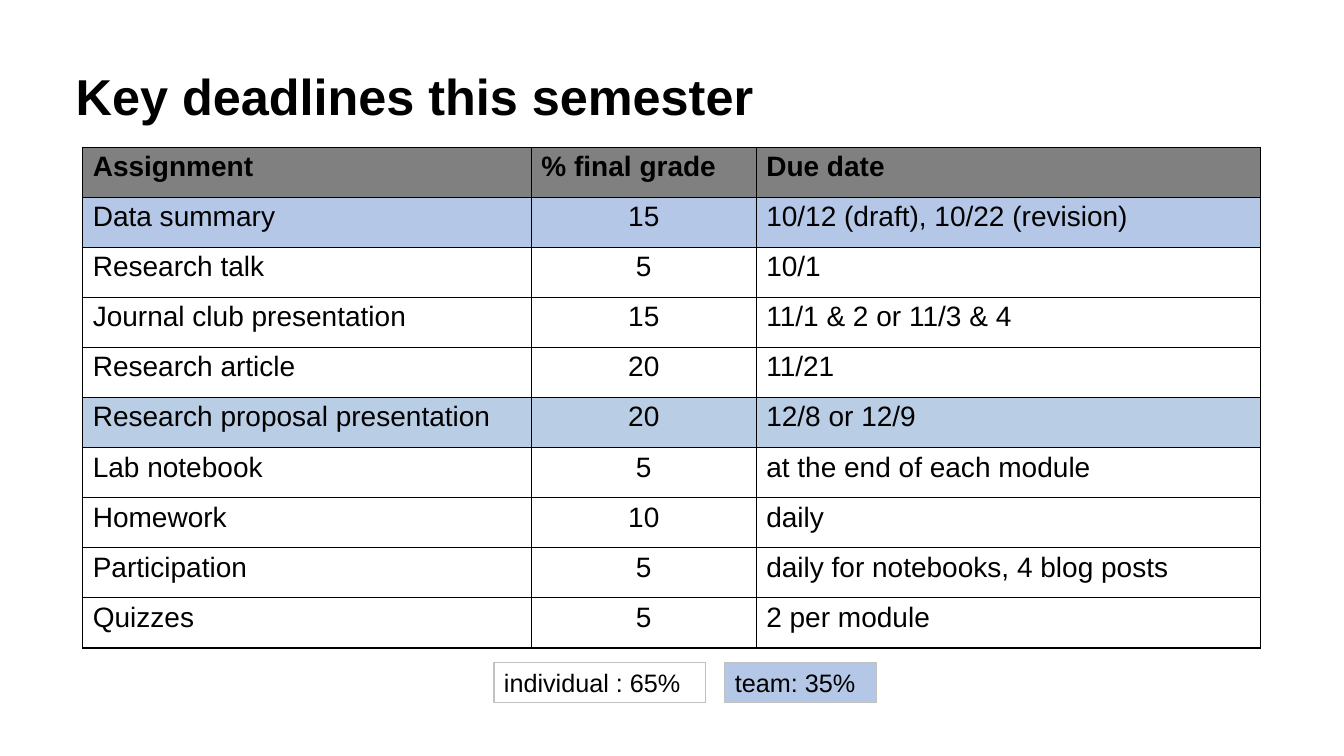
from lxml import etree
from pptx import Presentation
from pptx.dml.color import RGBColor
from pptx.enum.shapes import MSO_SHAPE
from pptx.enum.text import MSO_ANCHOR, PP_ALIGN
from pptx.oxml.ns import qn
from pptx.util import Inches, Pt

RECT = MSO_SHAPE.RECTANGLE
LEFT, CENTER = PP_ALIGN.LEFT, PP_ALIGN.CENTER
TOP, MIDDLE = MSO_ANCHOR.TOP, MSO_ANCHOR.MIDDLE

BLACK = RGBColor(0x00, 0x00, 0x00)
HEADER_GREY = RGBColor(0x80, 0x80, 0x80)
TEAM_BLUE = RGBColor(0xB4, 0xC7, 0xE7)
PROPOSAL_BLUE = RGBColor(0xB9, 0xCD, 0xE5)
LEGEND_GREY = RGBColor(0xC1, 0xC1, 0xC1)

TITLE = "Key deadlines this semester"
DEADLINES = [
    ("Assignment", "% final grade", "Due date"),
    ("Data summary", "15", "10/12 (draft), 10/22 (revision)"),
    ("Research talk", "5", "10/1"),
    ("Journal club presentation", "15", "11/1 & 2 or 11/3 & 4"),
    ("Research article", "20", "11/21"),
    ("Research proposal presentation", "20", "12/8 or 12/9"),
    ("Lab notebook", "5", "at the end of each module"),
    ("Homework", "10", "daily"),
    ("Participation", "5", "daily for notebooks, 4 blog posts"),
    ("Quizzes", "5", "2 per module"),
]
ROW_FILLS = {0: HEADER_GREY, 1: TEAM_BLUE, 5: PROPOSAL_BLUE}
COL_WIDTHS = (4.45, 2.23, 5.0)
ROW_HEIGHT = 4.97 / len(DEADLINES)
LEGEND = [
    ("individual : 65%", 4.9, 2.1, None),
    ("team: 35%", 7.19, 1.5, TEAM_BLUE),
]
CELL_FORMAT = {
    "margin_left": Inches(0.1),
    "margin_right": Inches(0.1),
    "margin_top": Inches(0.04),
    "margin_bottom": Inches(0.04),
    "vertical_anchor": TOP,
}


def set_attrs(obj, values):
    for name, value in values.items():
        setattr(obj, name, value)


def write(tf, text, size, bold=False, align=LEFT):
    p = tf.paragraphs[0]
    p.alignment = align
    r = p.add_run()
    r.text = text
    set_attrs(r.font, {"name": "Arial", "size": Pt(size), "bold": bold})
    r.font.color.rgb = BLACK
    return p


def paint(fill, color):
    if color is None:
        fill.background()
    else:
        fill.solid()
        fill.fore_color.rgb = color


def add_borders(cell):
    tc_pr = cell._tc.get_or_add_tcPr()
    for i, side in enumerate(("lnL", "lnR", "lnT", "lnB")):
        ln = etree.Element(qn(f"a:{side}"), w=str(Pt(1)))
        solid = etree.SubElement(ln, qn("a:solidFill"))
        etree.SubElement(solid, qn("a:srgbClr"), val=str(BLACK))
        tc_pr.insert(i, ln)


def add_title(slide):
    sp = slide.shapes.title
    set_attrs(sp, {"left": Inches(0.65), "top": Inches(0.26),
                   "width": Inches(11.5), "height": Inches(1.45)})
    sp.text_frame.vertical_anchor = MIDDLE
    p = write(sp.text_frame, TITLE, 36, bold=True)
    p.line_spacing = 0.9


def add_legend(slide):
    for text, left, width, color in LEGEND:
        sp = slide.shapes.add_shape(RECT, Inches(left), Inches(6.57),
                                    Inches(width), Inches(0.4))
        sp.shadow.inherit = False
        paint(sp.fill, color)
        sp.line.color.rgb = LEGEND_GREY
        sp.line.width = Pt(0.75)
        tf = sp.text_frame
        set_attrs(tf, {"word_wrap": True, "vertical_anchor": TOP})
        write(tf, text, 18)


def add_deadlines(slide):
    table = slide.shapes.add_table(
        len(DEADLINES), len(COL_WIDTHS), Inches(0.82), Inches(1.46),
        Inches(sum(COL_WIDTHS)), Inches(ROW_HEIGHT * len(DEADLINES))).table
    set_attrs(table, {"first_row": False, "horz_banding": False})
    for col, width in zip(table.columns, COL_WIDTHS):
        col.width = Inches(width)
    for i, values in enumerate(DEADLINES):
        table.rows[i].height = Inches(ROW_HEIGHT)
        for j, text in enumerate(values):
            cell = table.cell(i, j)
            set_attrs(cell, CELL_FORMAT)
            paint(cell.fill, ROW_FILLS.get(i))
            add_borders(cell)
            align = CENTER if i > 0 and j == 1 else LEFT
            write(cell.text_frame, text, 20, bold=i == 0, align=align)


def main():
    prs = Presentation()
    set_attrs(prs, {"slide_width": Inches(13.33), "slide_height": Inches(7.5)})
    slide = prs.slides.add_slide(prs.slide_layouts[5])
    add_title(slide)
    add_legend(slide)
    add_deadlines(slide)
    prs.save("out.pptx")


if __name__ == "__main__":
    main()
